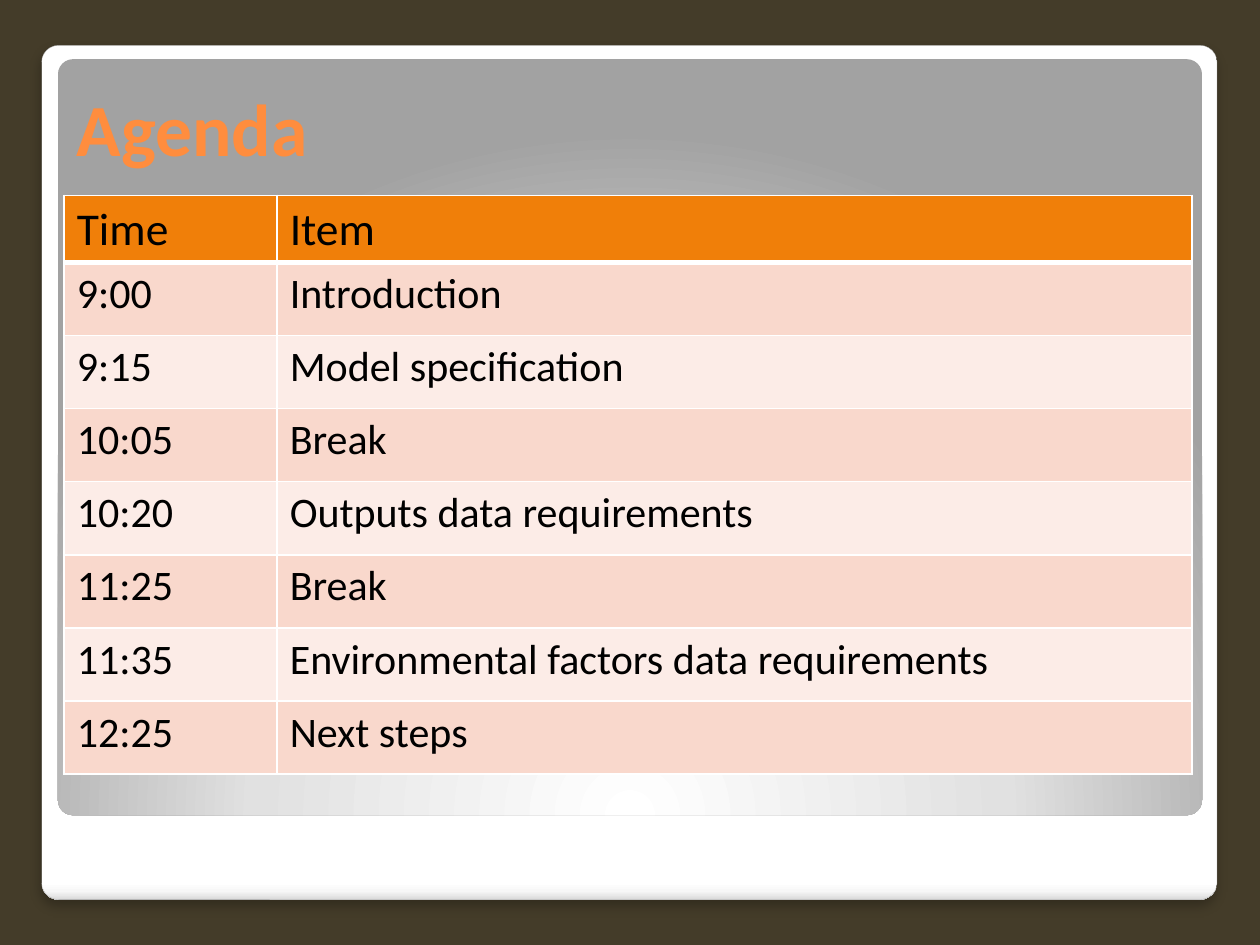
from lxml import etree
from pptx import Presentation
from pptx.dml.color import RGBColor
from pptx.enum.shapes import MSO_SHAPE
from pptx.oxml import parse_xml
from pptx.oxml.ns import nsdecls, qn
from pptx.util import Inches, Pt

ROUNDED = MSO_SHAPE.ROUNDED_RECTANGLE

TITLE = "Agenda"
AGENDA = [
    ("Time", "Item"),
    ("9:00", "Introduction"),
    ("9:15", "Model specification"),
    ("10:05", "Break"),
    ("10:20", "Outputs data requirements"),
    ("11:25", "Break"),
    ("11:35", "Environmental factors data requirements"),
    ("12:25", "Next steps"),
]

FONT = "Calibri"
BACKDROP = RGBColor(0x44, 0x3C, 0x29)
TITLE_ORANGE = RGBColor(0xFF, 0x8D, 0x3E)
HEADER_ORANGE = RGBColor(0xF0, 0x7F, 0x09)
BANDS = (RGBColor(0xFC, 0xEC, 0xE7), RGBColor(0xF9, 0xD8, 0xCC))
BLACK = RGBColor(0, 0, 0)
WHITE = RGBColor(0xFF, 0xFF, 0xFF)
FRAME_GREY = RGBColor(0xA4, 0xA4, 0xA4)

FRAME_STOPS = [(0, WHITE), (98, WHITE), (99, RGBColor(0xF7, 0xF7, 0xF7)),
               (100, RGBColor(0xDA, 0xDA, 0xDA))]
PANEL_STOPS = [(0, WHITE), (55, RGBColor(0xE1, 0xE1, 0xE1)),
               (100, RGBColor(0xA2, 0xA2, 0xA2))]
DOWNWARD = '<a:lin ang="5400000" scaled="0"/>'
FROM_BELOW = ('<a:path path="circle"><a:fillToRect l="50000" t="175000" '
              'r="50000" b="-75000"/></a:path>')

SLIDE_W, SLIDE_H = 10, 7.5
TABLE_LEFT, TABLE_TOP = 0.51, 1.55
COLUMN_WIDTHS = (1.69, 7.26)
HEADER_HEIGHT, ROW_HEIGHT = 0.52, 0.58


def add_rounded_panel(slide, left, top, width, height, stops, direction):
    panel = slide.shapes.add_shape(ROUNDED, Inches(left), Inches(top),
                                   Inches(width), Inches(height))
    panel.adjustments[0] = 0.02
    panel.line.fill.background()
    panel.shadow.inherit = False
    stop_xml = "".join(
        f'<a:gs pos="{share * 1000}"><a:srgbClr val="{color}"/></a:gs>'
        for share, color in stops)
    gradient = parse_xml(f'<a:gradFill {nsdecls("a")} rotWithShape="1">'
                         f'<a:gsLst>{stop_xml}</a:gsLst>{direction}</a:gradFill>')
    panel._element.spPr.find(qn("a:prstGeom")).addnext(gradient)
    return panel


def add_soft_shadow(panel):
    effects = panel._element.spPr.find(qn("a:effectLst"))
    shadow = etree.SubElement(effects, qn("a:outerShdw"), blurRad=str(Pt(6)),
                              dist=str(Pt(4)), dir="5400000", algn="t",
                              rotWithShape="0")
    color = etree.SubElement(shadow, qn("a:srgbClr"), val=str(BLACK))
    etree.SubElement(color, qn("a:alpha"), val="25000")


def write(frame, text, size, color, bold=False):
    run = frame.paragraphs[0].add_run()
    run.text = text
    run.font.name = FONT
    run.font.size = Pt(size)
    run.font.bold = bold
    run.font.color.rgb = color


def set_borders(cell, widths):
    properties = cell._tc.get_or_add_tcPr()
    for position, (side, width) in enumerate(widths.items()):
        properties.insert(position, parse_xml(
            f'<a:ln{side} {nsdecls("a")} w="{Pt(width)}"><a:solidFill>'
            f'<a:srgbClr val="{WHITE}"/></a:solidFill></a:ln{side}>'))


def add_agenda(slide):
    body_rows = len(AGENDA) - 1
    table = slide.shapes.add_table(
        len(AGENDA), len(COLUMN_WIDTHS), Inches(TABLE_LEFT), Inches(TABLE_TOP),
        Inches(sum(COLUMN_WIDTHS)),
        Inches(HEADER_HEIGHT + body_rows * ROW_HEIGHT)).table
    for column, width in zip(table.columns, COLUMN_WIDTHS):
        column.width = Inches(width)
    for r, entry in enumerate(AGENDA):
        is_header = r == 0
        table.rows[r].height = Inches(HEADER_HEIGHT if is_header else ROW_HEIGHT)
        for c, text in enumerate(entry):
            cell = table.cell(r, c)
            cell.fill.solid()
            cell.fill.fore_color.rgb = HEADER_ORANGE if is_header else BANDS[r % 2]
            set_borders(cell, {"L": 1, "R": 1, "T": 3 if r == 1 else 1,
                               "B": 3 if is_header else 1})
            write(cell.text_frame, text, 26 if is_header else 24, BLACK)


def main():
    deck = Presentation()
    deck.slide_width, deck.slide_height = Inches(SLIDE_W), Inches(SLIDE_H)
    slide = deck.slides.add_slide(deck.slide_layouts[6])
    slide.background.fill.solid()
    slide.background.fill.fore_color.rgb = BACKDROP

    frame = add_rounded_panel(slide, 0.33, 0.36, 9.33, 6.78, FRAME_STOPS, DOWNWARD)
    frame.line.color.rgb = FRAME_GREY
    frame.line.width = Pt(0.16)
    add_soft_shadow(frame)
    add_rounded_panel(slide, 0.46, 0.47, 9.08, 6, PANEL_STOPS, FROM_BELOW)

    title = slide.shapes.add_textbox(Inches(TABLE_LEFT), Inches(0.61),
                                     Inches(sum(COLUMN_WIDTHS)), Inches(0.82))
    title.text_frame.word_wrap = True
    write(title.text_frame, TITLE, 42, TITLE_ORANGE, bold=True)
    add_agenda(slide)
    deck.save("out.pptx")


if __name__ == "__main__":
    main()
